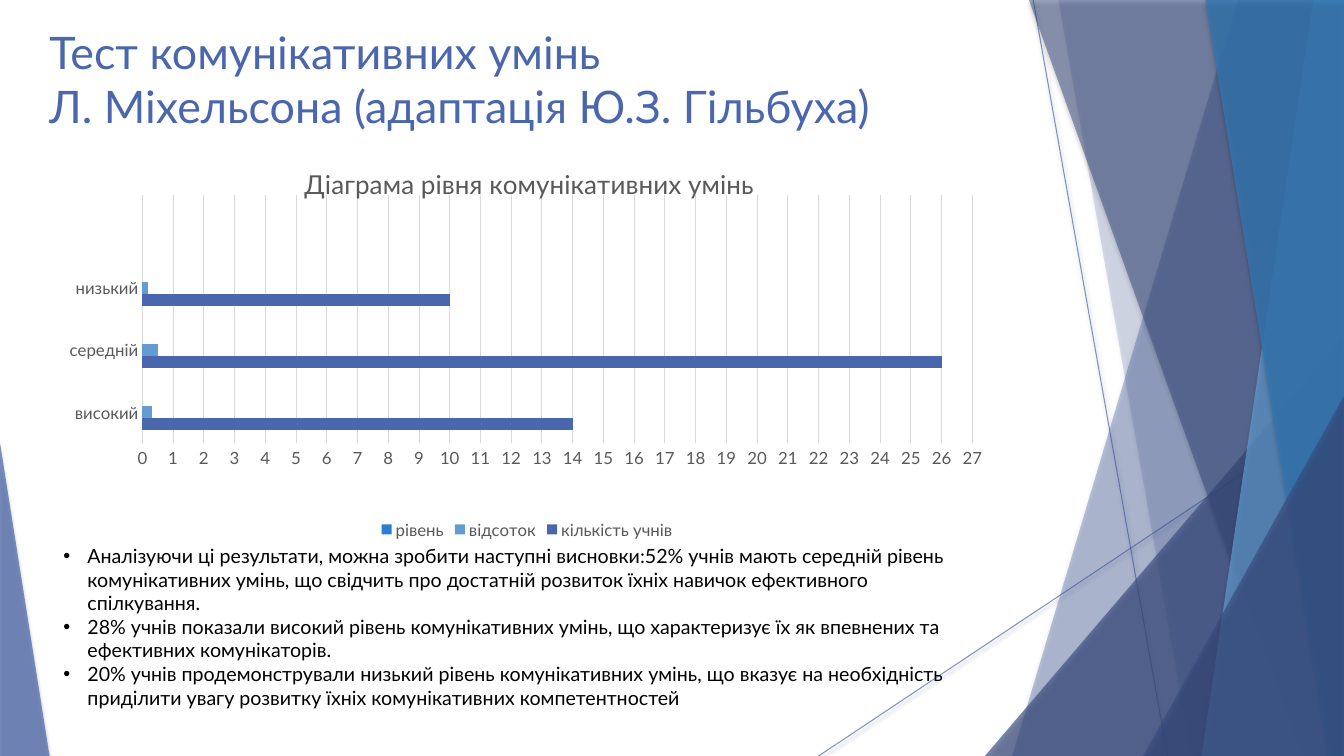
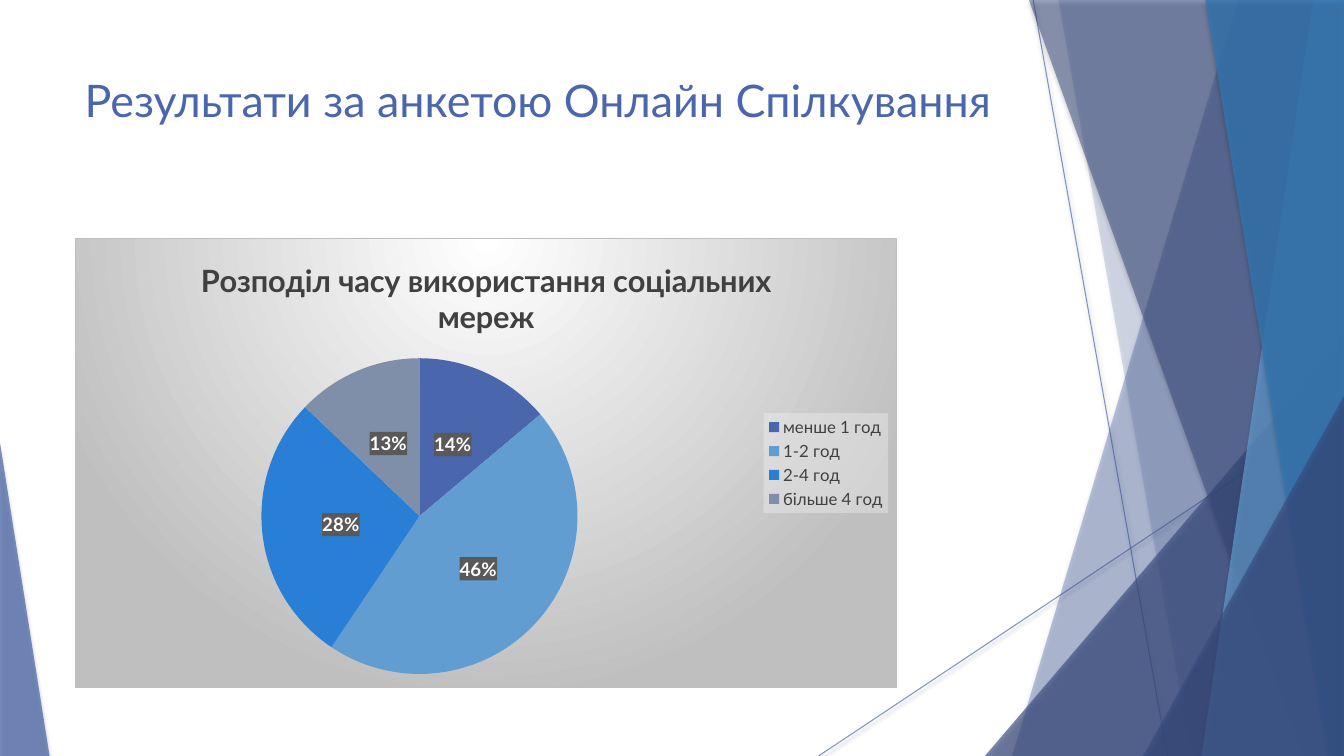
from dataclasses import dataclass

from lxml import etree
from pptx import Presentation
from pptx.chart.data import CategoryChartData
from pptx.dml.color import RGBColor
from pptx.enum.chart import XL_CHART_TYPE as ChartType
from pptx.enum.chart import XL_LABEL_POSITION as LabelPos
from pptx.enum.chart import XL_LEGEND_POSITION as LegendPos
from pptx.enum.chart import XL_TICK_MARK as TickMark
from pptx.enum.shapes import MSO_CONNECTOR as Connector
from pptx.enum.shapes import MSO_SHAPE as Shape
from pptx.oxml import parse_xml
from pptx.oxml.ns import nsdecls, qn
from pptx.util import Inches, Pt

FONT = "Lato"
BLUE = RGBColor(0x4A, 0x66, 0xAC)
NAVY = RGBColor(0x38, 0x4C, 0x81)
SKY = RGBColor(0x62, 0x9D, 0xD1)
OCEAN = RGBColor(0x34, 0x77, 0xB2)
AZURE = RGBColor(0x29, 0x7F, 0xD5)
SLATE = RGBColor(0x7F, 0x8F, 0xA9)
BLACK = RGBColor(0, 0, 0)
WHITE = RGBColor(0xFF, 0xFF, 0xFF)
CHARCOAL = RGBColor(0x40, 0x40, 0x40)
GREY = RGBColor(0x59, 0x59, 0x59)
PALE = RGBColor(0xF2, 0xF2, 0xF2)
SILVER = RGBColor(0xBF, 0xBF, 0xBF)
GRID = RGBColor(0xD9, 0xD9, 0xD9)

COLUMNS, ROWS = 32, 18
CELL = Inches(7.5) / ROWS


@dataclass
class Box:
    """Area of the slide, in columns and rows of the grid."""
    left: float
    top: float
    width: float
    height: float

    def point(self, column, row):
        """Return the slide position of a cell counted from this box."""
        return round((self.left + column) * CELL), round((self.top + row) * CELL)

    def inner(self, left, top, width, height):
        """Return a box placed relative to this one."""
        return Box(self.left + left, self.top + top, width, height)

    def frame(self):
        """Return left, top, width and height in slide units."""
        return (*self.point(0, 0), round(self.width * CELL), round(self.height * CELL))


PAGE = Box(0, 0, COLUMNS, ROWS)


def set_alpha(fill_parent, percent):
    """Make the first solid colour below an element translucent."""
    color = fill_parent.find(".//" + qn("a:srgbClr"))
    etree.SubElement(color, qn("a:alpha"), val=str(percent * 1000))


def add_shadow(shape, blur, distance, opacity):
    """Give a shape or connector a soft shadow straight below it."""
    shape.element.spPr.append(parse_xml(
        f'<a:effectLst {nsdecls("a")}><a:outerShdw blurRad="{Pt(blur)}" '
        f'dist="{Pt(distance)}" dir="5400000" algn="ctr" rotWithShape="0">'
        f'<a:srgbClr val="000000"><a:alpha val="{opacity * 1000}"/></a:srgbClr>'
        '</a:outerShdw></a:effectLst>'))


def style_facet(facet, color, opacity):
    """Fill a facet with a translucent colour and a shadow."""
    facet.fill.solid()
    facet.fill.fore_color.rgb = color
    set_alpha(facet.element.spPr, opacity)
    facet.line.fill.background()
    add_shadow(facet, 3, 2, 35)


def add_ray(slide, box, start, end):
    """Draw one thin line of the backdrop."""
    ray = slide.shapes.add_connector(
        Connector.STRAIGHT, *box.point(*start), *box.point(*end))
    ray.line.color.rgb = BLUE
    ray.line.width = Pt(0.75)
    set_alpha(ray.line._get_or_add_ln(), 70)
    add_shadow(ray, 3.1, 1.6, 38)


def add_panel(slide, box, top_column, bottom_column, color, opacity):
    """Draw a full-height panel from a slanted left edge to the right edge."""
    builder = slide.shapes.build_freeform(*box.point(top_column, 0), scale=1.0)
    corners = [(box.width, 0), (box.width, box.height), (bottom_column, box.height)]
    builder.add_line_segments([box.point(*corner) for corner in corners], close=True)
    style_facet(builder.convert_to_shape(), color, opacity)


def add_wedge(slide, box, apex, color, opacity):
    """Draw a triangle with its apex at a share of its width."""
    wedge = slide.shapes.add_shape(Shape.ISOSCELES_TRIANGLE, *box.frame())
    wedge.adjustments[0] = apex
    style_facet(wedge, color, opacity)


def add_backdrop(slide, box):
    """Draw the facets that all slides share."""
    add_ray(slide, box, (24.6, 0), (27.8, box.height))
    add_ray(slide, box, (box.width, 9.67), (19.49, box.height))
    add_panel(slide, box, 29.47, 24.1, BLUE, 36)
    add_panel(slide, box, 25.2, 28.37, BLUE, 20)
    add_wedge(slide, box.inner(23.45, 8, 8.55, 10), 1, NAVY, 66)
    add_panel(slide, box, 24.5, 30.98, NAVY, 50)
    add_panel(slide, box, 31.27, 28.61, SKY, 70)
    add_panel(slide, box, 28.7, 31.63, OCEAN, 80)
    add_wedge(slide, box.inner(27.22, 9.43, 4.78, 8.57), 1, NAVY, 66)
    add_wedge(slide, box.inner(0, 10.54, 1.18, 7.46), 0, BLUE, 70)


def style_font(font, size, color, bold=False):
    """Set the shared typeface with a size and colour."""
    font.name, font.size, font.bold = FONT, Pt(size), bold
    font.color.rgb = color


def add_text(slide, box, paragraphs, size=14, color=BLACK, bullet=None):
    """Write paragraphs in a wrapped text box, bulleted on request."""
    frame = slide.shapes.add_textbox(*box.frame()).text_frame
    frame.word_wrap = True
    for index, words in enumerate(paragraphs):
        paragraph = frame.paragraphs[0] if index == 0 else frame.add_paragraph()
        paragraph.text = words
        for run in paragraph.runs:
            style_font(run.font, size, color)
        if bullet:
            properties = paragraph._p.get_or_add_pPr()
            indent = Inches(0.24)
            properties.set("marL", str(indent))
            properties.set("indent", str(-indent))
            etree.SubElement(properties, qn("a:buFont"), typeface="Arial")
            etree.SubElement(properties, qn("a:buChar"), char=bullet)


def add_title(slide, box, title):
    """Write the slide title."""
    add_text(slide, box, [title], size=32, color=BLUE)


def add_chart(slide, box, kind, categories, series, title, title_size,
              text_color, legend_position, bold=False):
    """Place a chart with a title and a legend."""
    data = CategoryChartData()
    data.categories = categories
    for name, values in series:
        data.add_series(name, values)
    chart = slide.shapes.add_chart(kind, *box.frame(), data).chart
    style_font(chart.font, 12, text_color)
    chart.has_title = True
    chart.chart_title.text_frame.text = title
    heading = chart.chart_title.text_frame.paragraphs[0].runs[0]
    style_font(heading.font, title_size, text_color, bold)
    chart.has_legend = True
    chart.legend.position = legend_position
    chart.legend.include_in_layout = False
    style_font(chart.legend.font, 12, text_color)
    return chart


def set_layout(parent, index, **shares):
    """Place a chart part by shares of the chart area."""
    for old in parent.findall(qn("c:layout")):
        parent.remove(old)
    layout = etree.Element(qn("c:layout"))
    manual = etree.SubElement(layout, qn("c:manualLayout"))
    values = {"xMode": "edge", "yMode": "edge", **shares}
    if "w" in shares:
        values = {"layoutTarget": "inner", **values}
    for tag, value in values.items():
        etree.SubElement(manual, qn(f"c:{tag}"), val=str(value))
    parent.insert(index, layout)


def set_chart_fill(parent, fill_xml):
    """Give a chart part a fill, ahead of its text properties."""
    parent.find(qn("c:txPr")).addprevious(
        parse_xml(f'<c:spPr {nsdecls("c", "a")}>{fill_xml}</c:spPr>'))


def solid_xml(color, opacity=100):
    """Return the XML of a solid fill."""
    return (f'<a:solidFill><a:srgbClr val="{color}">'
            f'<a:alpha val="{opacity * 1000}"/></a:srgbClr></a:solidFill>')


def add_level_chart(slide, box):
    """Draw the bar chart of communication skill levels."""
    chart = add_chart(
        slide, box, ChartType.BAR_CLUSTERED,
        ["високий", "середній", "низький", ""],
        [("кількість учнів", [14, 26, 10, None]),
         ("відсоток", [0.3, 0.5, 0.2, None]),
         ("рівень", [None] * 4)],
        "Діаграма рівня комунікативних умінь", 18.6, GREY, LegendPos.BOTTOM)
    set_layout(chart.chart_title._element, 1, x=0.26, y=0.05)
    set_layout(chart.element.find(".//" + qn("c:plotArea")), 0,
               x=0.094, y=0.135, w=0.876, h=0.617)
    plot = chart.plots[0]
    plot.gap_width, plot.overlap, plot.vary_by_categories = 219, 0, False
    for level, color in zip(plot.series, (BLUE, SKY, AZURE)):
        level.format.fill.solid()
        level.format.fill.fore_color.rgb = color
    counts, levels = chart.value_axis, chart.category_axis
    for axis in (counts, levels):
        axis.major_tick_mark = axis.minor_tick_mark = TickMark.NONE
        style_font(axis.tick_labels.font, 12, GREY)
    counts.minimum_scale, counts.maximum_scale, counts.major_unit = 0, 27, 1
    counts.tick_labels.number_format = "General"
    counts.tick_labels.number_format_is_linked = False
    counts.format.line.fill.background()
    for line in (counts.major_gridlines.format.line, levels.format.line):
        line.color.rgb = GRID
        line.width = Pt(0.75)


def add_time_chart(slide, box):
    """Draw the pie chart of time spent in social networks."""
    title = "Розподіл часу використання соціальних мереж"
    chart = add_chart(
        slide, box, ChartType.PIE,
        ["менше 1 год", "1-2 год", "2-4 год", "більше 4 год"],
        [(title, [14, 46, 28, 13])],
        title, 22, CHARCOAL, LegendPos.RIGHT, bold=True)
    set_chart_fill(
        chart.element,
        '<a:gradFill><a:gsLst>'
        f'<a:gs pos="0"><a:srgbClr val="{WHITE}"/></a:gs>'
        f'<a:gs pos="100000"><a:srgbClr val="{SILVER}"/></a:gs></a:gsLst>'
        '<a:path path="circle"><a:fillToRect l="50000" t="0" r="50000" b="100000"/>'
        f'</a:path></a:gradFill><a:ln w="{Pt(0.75)}">{solid_xml(SILVER)}</a:ln>')
    set_chart_fill(chart.legend._element, solid_xml(PALE, 39))
    plot = chart.plots[0]
    plot.vary_by_categories = True
    for index, color in enumerate((BLUE, SKY, AZURE, SLATE)):
        slice_fill = plot.series[0].points[index].format.fill
        slice_fill.solid()
        slice_fill.fore_color.rgb = color
    plot.has_data_labels = True
    labels = plot.data_labels
    labels.show_percentage, labels.show_value = True, False
    labels.number_format, labels.number_format_is_linked = "0%", False
    labels.position = LabelPos.CENTER
    style_font(labels.font, 13.3, WHITE, bold=True)
    set_chart_fill(labels._element, solid_xml(GREY))


def add_skills_slide(slide, box):
    """Build the slide on the communication skills test."""
    add_backdrop(slide, box)
    add_title(slide, box.inner(0.94, 0.48, 23.5, 3.14),
              "Тест комунікативних умінь\vЛ. Міхельсона (адаптація Ю.З. Гільбуха)")
    add_level_chart(slide, box.inner(1.27, 3.34, 22.56, 9.6))
    add_text(slide, box.inner(1.27, 12.84, 21.48, 4.15), [
        "Аналізуючи ці результати, можна зробити наступні висновки:52% учнів мають "
        "середній рівень комунікативних умінь, що свідчить про достатній розвиток "
        "їхніх навичок ефективного спілкування.",
        "28% учнів показали високий рівень комунікативних умінь, що характеризує їх "
        "як впевнених та ефективних комунікаторів.",
        "20% учнів продемонстрували низький рівень комунікативних умінь, що вказує на "
        "необхідність приділити увагу розвитку їхніх комунікативних компетентностей",
    ], bullet="•")


def add_survey_slide(slide, box):
    """Build the slide on the online communication survey."""
    add_backdrop(slide, box)
    add_title(slide, box.inner(1.78, 1.61, 22.56, 3.46),
              "Результати за анкетою Онлайн Спілкування")
    add_time_chart(slide, box.inner(1.78, 5.66, 19.58, 10.73))


def main():
    """Build and save the presentation."""
    deck = Presentation()
    deck.slide_width, deck.slide_height = round(COLUMNS * CELL), round(ROWS * CELL)
    for build in (add_skills_slide, add_survey_slide):
        build(deck.slides.add_slide(deck.slide_layouts[6]), PAGE)
    deck.save("out.pptx")


if __name__ == "__main__":
    main()
